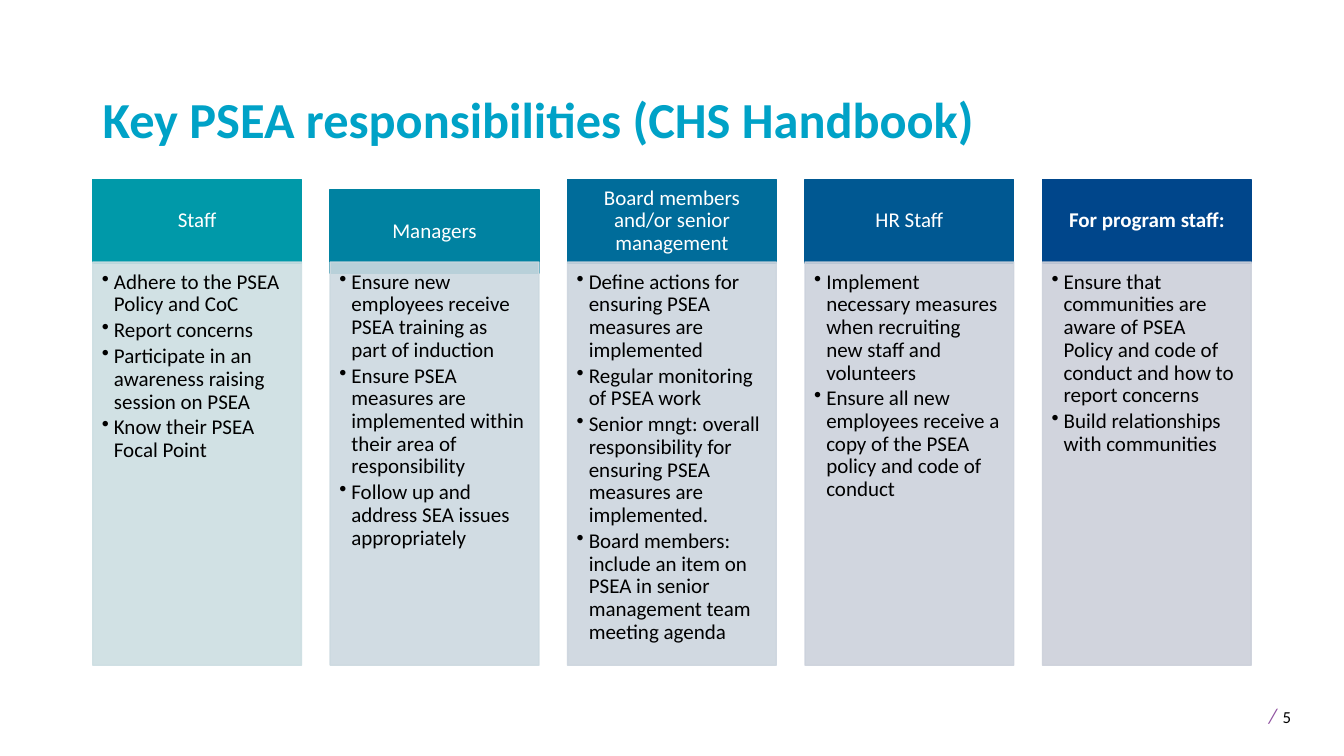
from lxml.etree import SubElement
from pptx import Presentation
from pptx.dml.color import RGBColor
from pptx.enum.shapes import MSO_SHAPE
from pptx.enum.text import MSO_ANCHOR, PP_ALIGN
from pptx.oxml.ns import qn
from pptx.util import Inches, Pt


def rgb(code):
    return RGBColor.from_string(code)


def add_panel(left, top, height, color, anchor, insets):
    """Add a filled column rectangle and return it."""
    panel = slide.shapes.add_shape(MSO_SHAPE.RECTANGLE, Inches(left), Inches(top),
                                   Inches(COLUMN_WIDTH), Inches(height))
    panel.shadow.inherit = False
    panel.fill.solid()
    panel.fill.fore_color.rgb = rgb(color)
    panel.line.color.rgb = rgb(color)
    panel.line.width = Pt(1)
    frame = panel.text_frame
    frame.word_wrap = True
    frame.vertical_anchor = anchor
    (frame.margin_left, frame.margin_top,
     frame.margin_right, frame.margin_bottom) = [Inches(inset) for inset in insets]
    return panel


FIRST_LEFT, LAST_LEFT = 0.92, 10.34
COLUMN_WIDTH = 2.07
HEADER_TOP, HEADER_HEIGHT = 1.78, 0.83
BODY_TOP, BODY_HEIGHT = 2.6, 4

# heading, header colour, body colour, header drop, bold heading, duties
roles = [
    ("Staff", "0099A9", "CCDEE2", 0, False, [
        "Adhere to the PSEA Policy and CoC",
        "Report concerns",
        "Participate in an awareness raising session on PSEA",
        "Know their PSEA Focal Point"]),
    ("Managers", "0082A1", "CCD9E0", 0.1, False, [
        "Ensure new employees receive PSEA training as part of induction",
        "Ensure PSEA measures are implemented within their area of responsibility",
        "Follow up and address SEA issues appropriately"]),
    ("Board members and/or senior management", "006C9A", "CCD5DE", 0, False, [
        "Define actions for ensuring PSEA measures are implemented",
        "Regular monitoring of PSEA work",
        "Senior mngt: overall responsibility for ensuring PSEA measures are implemented.",
        "Board members: include an item on PSEA in senior management team meeting agenda"]),
    ("HR Staff", "005892", "CCD2DC", 0, False, [
        "Implement necessary measures when recruiting new staff and volunteers",
        "Ensure all new employees receive a copy of the PSEA policy and code of conduct"]),
    ("For program staff:", "00468B", "CCD0DA", 0, True, [
        "Ensure that communities are aware of PSEA Policy and code of conduct "
        "and how to report concerns",
        "Build relationships with communities"]),
]

prs = Presentation()
prs.slide_width, prs.slide_height = Inches(13.33), Inches(7.5)
slide = prs.slides.add_slide(prs.slide_layouts[6])

title = slide.shapes.add_textbox(Inches(FIRST_LEFT), Inches(0.4), Inches(11.5), Inches(1.13))
title.text_frame.word_wrap = True
title.text_frame.vertical_anchor = MSO_ANCHOR.BOTTOM
heading = title.text_frame.paragraphs[0]
heading.text = "Key PSEA responsibilities (CHS Handbook)"
heading.line_spacing = 0.9
heading.font.name = "Calibri"
heading.font.size = Pt(36)
heading.font.bold = True
heading.font.color.rgb = rgb("00A2C7")

pitch = (LAST_LEFT - FIRST_LEFT) / (len(roles) - 1)
for column, (role, header_color, body_color, drop, bold, duties) in enumerate(roles):
    left = FIRST_LEFT + column * pitch

    header = add_panel(left, HEADER_TOP + drop, HEADER_HEIGHT, header_color,
                       MSO_ANCHOR.MIDDLE, (0.12, 0.07, 0.12, 0.07))
    label = header.text_frame.paragraphs[0]
    label.text = role
    label.alignment = PP_ALIGN.CENTER
    label.line_spacing = 0.9
    label.font.name = "Calibri"
    label.font.size = Pt(15)
    label.font.bold = bold
    label.font.color.rgb = rgb("FFFFFF")

    body = add_panel(left, BODY_TOP, BODY_HEIGHT, body_color,
                     MSO_ANCHOR.TOP, (0.09, 0.09, 0.12, 0.13))
    for color in body.element.spPr.iter(qn("a:srgbClr")):
        SubElement(color, qn("a:alpha"), val="90000")
    for row, duty in enumerate(duties):
        item = body.text_frame.paragraphs[0] if row == 0 else body.text_frame.add_paragraph()
        item.text = duty
        properties = item._p.get_or_add_pPr()
        properties.set("marL", str(Inches(0.12)))
        properties.set("indent", str(Inches(-0.12)))
        SubElement(properties, qn("a:buChar"), char="•")
        item.alignment = PP_ALIGN.LEFT
        item.line_spacing = 0.9
        item.space_after = Pt(2.25)
        item.font.name = "Calibri"
        item.font.size = Pt(15)
        item.font.color.rgb = rgb("000000")

page_mark = slide.shapes.add_textbox(Inches(12.43), Inches(6.88), Inches(0.87), Inches(0.4))
page_mark.text_frame.word_wrap = True
page_line = page_mark.text_frame.paragraphs[0]
for text, size, color, italic in [(" ", 18, "000000", False), ("/", 15, "9053A1", True),
                                  (" ", 18, "000000", False), ("5", 12, "000000", False)]:
    run = page_line.add_run()
    run.text = text
    run.font.name = "Calibri"
    run.font.size = Pt(size)
    run.font.italic = italic
    run.font.color.rgb = rgb(color)

prs.save("out.pptx")
